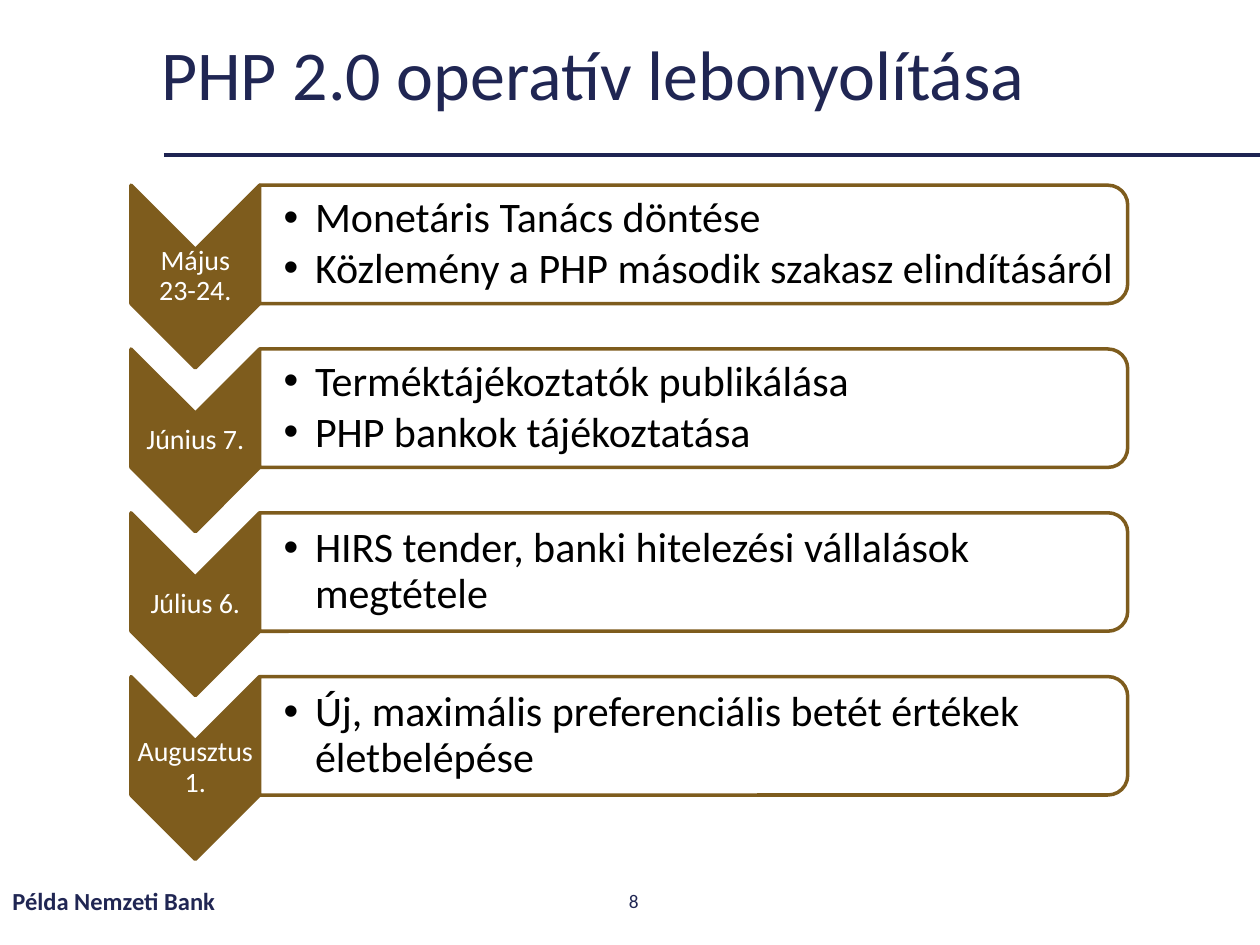
from lxml import etree
from pptx import Presentation
from pptx.dml.color import RGBColor
from pptx.enum.shapes import MSO_CONNECTOR, MSO_SHAPE
from pptx.enum.text import MSO_ANCHOR, PP_ALIGN
from pptx.oxml.ns import qn
from pptx.util import Inches, Pt

MIDDLE = MSO_ANCHOR.MIDDLE
LEFT, CENTER = PP_ALIGN.LEFT, PP_ALIGN.CENTER
CHEVRON, PANEL = MSO_SHAPE.CHEVRON, MSO_SHAPE.ROUND_2_SAME_RECTANGLE
NAVY, BRONZE, WHITE, BLACK = "202653", "7E5C1D", "FFFFFF", "000000"


def color(hex_code):
    return RGBColor.from_string(hex_code)


def write(box, lines, size, ink, align=LEFT, bold=False, spacing=1, insets=(0.1, 0.05)):
    label = slide.shapes.add_textbox(*[Inches(length) for length in box])
    frame = label.text_frame
    frame.word_wrap = True
    frame.vertical_anchor = MIDDLE
    frame.margin_left, frame.margin_right = Inches(insets[0]), Inches(insets[-1])
    frame.margin_top = frame.margin_bottom = Inches(insets[1])
    frame.text = lines
    for paragraph in frame.paragraphs:
        paragraph.alignment = align
        paragraph.line_spacing = spacing
        for run in paragraph.runs:
            run.font.name = "Calibri"
            run.font.size = Pt(size)
            run.font.bold = bold
            run.font.color.rgb = color(ink)
    return frame


deck = Presentation()
deck.slide_width, deck.slide_height = Inches(10), Inches(7.5)
slide = deck.slides.add_slide(deck.slide_layouts[6])

rule = slide.shapes.add_connector(
    MSO_CONNECTOR.STRAIGHT, Inches(1.3), Inches(1.23), deck.slide_width, Inches(1.23))
rule.line.color.rgb = color("1E2452")
rule.line.width = Pt(2.25)
etree.SubElement(rule._element.spPr, qn("a:effectLst"))

write((1.18, 0.2, 8.19, 0.83), "PHP 2.0 operatív lebonyolítása", 40, NAVY, spacing=0.9)
write((0, 6.95, 3.38, 0.4), "Példa Nemzeti Bank", 14, NAVY, bold=True)
write((3.88, 6.95, 2.25, 0.4), "8", 11, NAVY, CENTER)

steps = [
    ("Május\v23-24.", "Monetáris Tanács döntése\nKözlemény a PHP második szakasz elindításáról"),
    ("Június 7.", "Terméktájékoztatók publikálása\nPHP bankok tájékoztatása"),
    ("Július 6.", "HIRS tender, banki hitelezési vállalások megtétele"),
    ("Augusztus 1.", "Új, maximális preferenciális betét értékek életbelépése"),
]
first_top, row_pitch = 1.47, 1.3
date_left, date_width, arrow_height = 1.04, 1.02, 1.45
panel_left, panel_width, panel_height = date_left + date_width, 6.89, 0.94

for row, (date, tasks) in enumerate(steps):
    top = first_top + row * row_pitch
    for preset, left, width, height, fill in (
        (CHEVRON, date_left, date_width, arrow_height, BRONZE),
        (PANEL, panel_left, panel_width, panel_height, WHITE),
    ):
        turned_left = left + (width - height) / 2
        turned_top = top + (height - width) / 2
        block = slide.shapes.add_shape(
            preset, Inches(turned_left), Inches(turned_top), Inches(height), Inches(width))
        block.rotation = 90
        block.shadow.inherit = False
        block.fill.solid()
        block.fill.fore_color.rgb = color(fill)
        block.line.color.rgb = color(BRONZE)
        block.line.width = Pt(2)

    write((date_left, top + date_width / 2, date_width, arrow_height - date_width),
          date, 16, WHITE, CENTER, spacing=0.9, insets=(0.01, 0.01))
    task_list = write((panel_left, top + 0.05, 6.85, panel_height - 0.1),
                      tasks, 24, BLACK, spacing=0.9, insets=(0.19, 0.02))
    for task in task_list.paragraphs:
        task.space_after = Pt(3)
        properties = task._p.get_or_add_pPr()
        properties.set("marL", str(Inches(0.25)))
        properties.set("indent", str(-Inches(0.25)))
        etree.SubElement(properties, qn("a:buFont"), typeface="Arial")
        etree.SubElement(properties, qn("a:buChar"), char="•")

deck.save("out.pptx")
